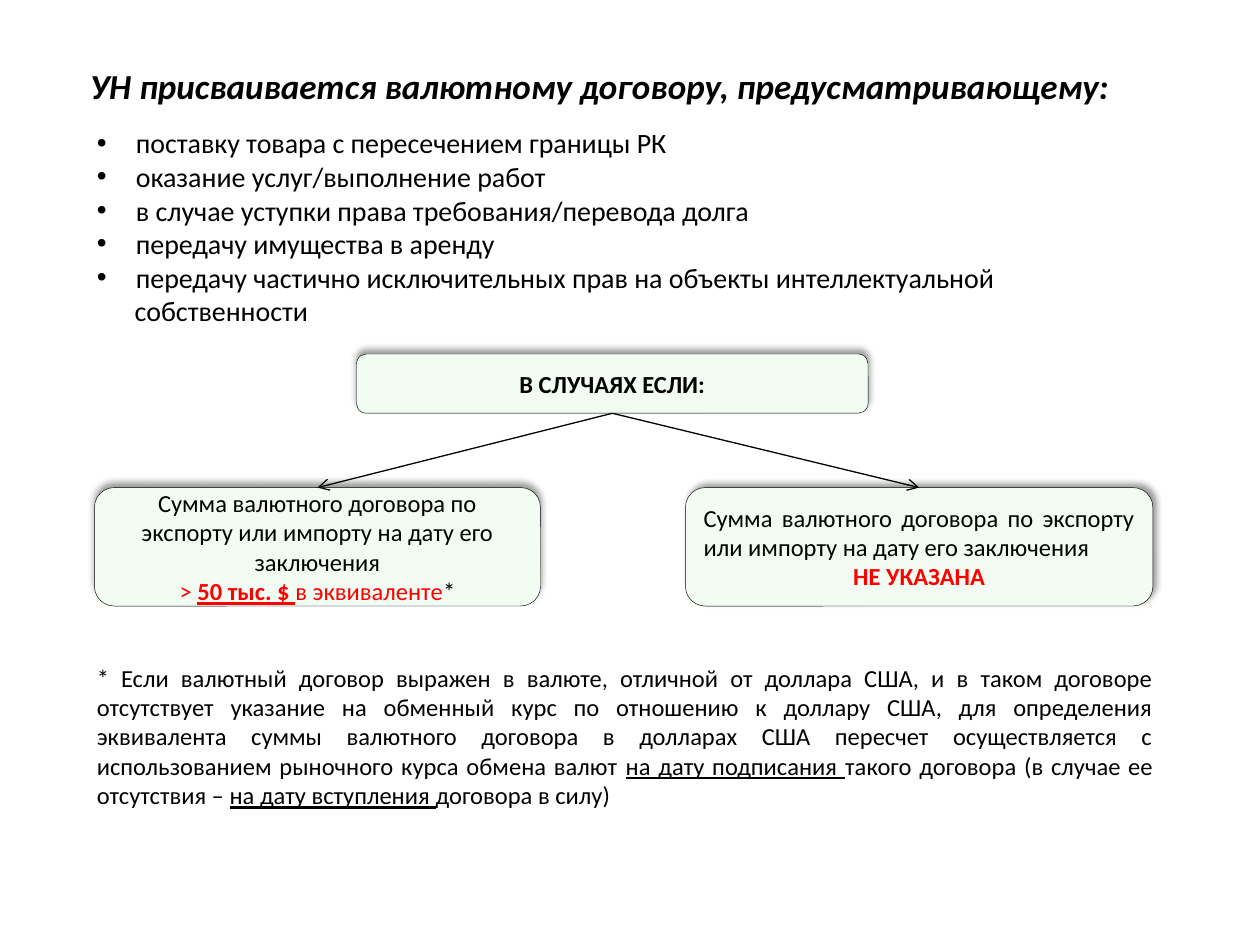
from dataclasses import dataclass

from lxml.etree import SubElement
from pptx import Presentation
from pptx.dml.color import RGBColor
from pptx.enum.shapes import MSO_CONNECTOR, MSO_SHAPE
from pptx.enum.text import MSO_ANCHOR, PP_ALIGN
from pptx.oxml.ns import qn
from pptx.util import Inches, Pt


@dataclass(frozen=True)
class Theme:
    """Hold the colours, font and type sizes of the deck."""
    font: str = "Calibri"
    ink: str = "000000"
    accent: str = "FF0000"
    paper: str = "FFFFFF"
    card: str = "F2FCF2"
    title_size: int = 20
    bullet_size: int = 16
    body_size: int = 14


THEME = Theme()


def add_span(para, text, *, size=THEME.body_size, color=THEME.ink,
             bold=False, italic=False, underline=False):
    """Append formatted text to a paragraph."""
    span = para.add_run()
    span.text = text
    font = span.font
    font.name, font.size = THEME.font, Pt(size)
    font.color.rgb = RGBColor.from_string(color)
    font.bold, font.italic, font.underline = bold, italic, underline


def add_para(box, spans, alignment=PP_ALIGN.LEFT):
    """Add a paragraph of (text, format) spans, using the empty first one if free."""
    frame = box.text_frame
    first = frame.paragraphs[0]
    para = frame.add_paragraph() if first.runs else first
    para.alignment = alignment
    for text, style in spans:
        add_span(para, text, **style)
    return para


def set_indent(para, left, bullet=None):
    """Indent a paragraph and optionally hang a bullet in the indent."""
    properties = para._p.get_or_add_pPr()
    properties.set("marL", str(Inches(left)))
    properties.set("indent", str(Inches(-left if bullet else 0)))
    if bullet:
        SubElement(properties, qn("a:buFont"), typeface="Arial")
        SubElement(properties, qn("a:buChar"), char=bullet)


def add_text_box(page, left, top, width, height):
    """Add a wrapping text box."""
    box = page.shapes.add_textbox(Inches(left), Inches(top), Inches(width), Inches(height))
    box.text_frame.word_wrap = True
    return box


def add_panel(page, kind, fill, left, top, width, height):
    """Add a filled shape without line or shadow, with text in its middle."""
    panel = page.shapes.add_shape(
        kind, Inches(left), Inches(top), Inches(width), Inches(height))
    panel.shadow.inherit = False
    panel.fill.solid()
    panel.fill.fore_color.rgb = RGBColor.from_string(fill)
    panel.line.fill.background()
    panel.text_frame.word_wrap = True
    panel.text_frame.vertical_anchor = MSO_ANCHOR.MIDDLE
    return panel


def add_card(page, left, top, width, height, shadow_angle=270):
    """Add a rounded, outlined card with a soft shadow."""
    card = add_panel(page, MSO_SHAPE.ROUNDED_RECTANGLE, THEME.card, left, top, width, height)
    card.line.color.rgb = RGBColor.from_string(THEME.ink)
    card.line.width = Pt(0.25)
    effects = card._element.spPr.find(qn("a:effectLst"))
    shadow = SubElement(effects, qn("a:outerShdw"), blurRad=str(Pt(4)), dist=str(Pt(3)),
                        dir=str(shadow_angle * 60000), rotWithShape="0")
    color = SubElement(shadow, qn("a:srgbClr"), val=THEME.ink)
    SubElement(color, qn("a:alpha"), val="40000")
    return card


def add_arrow(page, source, target):
    """Join the bottom of one card to the top of another with an arrow."""
    arrow = page.shapes.add_connector(MSO_CONNECTOR.STRAIGHT, 0, 0, 0, 0)
    arrow.begin_connect(source, 2)
    arrow.end_connect(target, 0)
    arrow.line.color.rgb = RGBColor.from_string(THEME.ink)
    arrow.line.width = Pt(0.75)
    SubElement(arrow.line._get_or_add_ln(), qn("a:tailEnd"), type="arrow")
    SubElement(arrow._element.spPr, qn("a:effectLst"))


def add_heading(page):
    """Add the slide heading."""
    heading = add_panel(page, MSO_SHAPE.RECTANGLE, THEME.paper, 0.37, 0.41, 8.78, 0.54)
    style = dict(size=THEME.title_size, bold=True, italic=True)
    add_para(heading, [("УН присваивается валютному договору, предусматривающему:", style)],
             PP_ALIGN.CENTER)


def add_subjects(page):
    """Add the bulleted list of contract subjects."""
    box = add_text_box(page, 0.67, 0.95, 8.48, 1.69)
    style = dict(size=THEME.bullet_size)
    subjects = [
        "поставку товара с пересечением границы РК",
        "оказание услуг/выполнение работ",
        "в случае уступки права требования/перевода долга",
        "передачу имущества в аренду",
        "передачу частично исключительных прав на объекты интеллектуальной",
    ]
    for subject in subjects:
        set_indent(add_para(box, [(subject, style)]), 0.31, "•")
    set_indent(add_para(box, [("собственности", style)]), 0.3)


def add_conditions(page):
    """Add the card diagram of the two conditions."""
    red = dict(color=THEME.accent)
    condition = "Сумма валютного договора по экспорту или импорту на дату его заключения"
    cases = add_card(page, 2.83, 2.81, 4.06, 0.47)
    add_para(cases, [("В СЛУЧАЯХ ЕСЛИ:", dict(bold=True))], PP_ALIGN.CENTER)

    above_limit = add_card(page, 0.75, 3.87, 3.54, 0.94)
    add_para(above_limit, [(condition, {})], PP_ALIGN.CENTER)
    add_para(above_limit, [
        ("> ", red),
        ("50 тыс. $ ", dict(red, bold=True, underline=True)),
        ("в эквиваленте", red),
        ("*", {}),
    ], PP_ALIGN.CENTER)

    not_stated = add_card(page, 5.44, 3.87, 3.71, 0.94, shadow_angle=315)
    add_para(not_stated, [(condition, {})], PP_ALIGN.JUSTIFY)
    add_para(not_stated, [("НЕ УКАЗАНА", dict(red, bold=True))], PP_ALIGN.CENTER)

    for outcome in (above_limit, not_stated):
        add_arrow(page, cases, outcome)


def add_footnote(page):
    """Add the note on converting the contract amount."""
    box = add_text_box(page, 0.67, 5.21, 8.58, 1.34)
    underlined = dict(underline=True)
    add_para(box, [
        ("* Если валютный договор выражен в валюте, отличной от доллара США, и в таком "
         "договоре отсутствует указание на обменный курс по отношению к доллару США, для "
         "определения эквивалента суммы валютного договора в долларах США пересчет "
         "осуществляется с использованием рыночного курса обмена валют ", {}),
        ("на дату подписания ", underlined),
        ("такого договора (в случае ее отсутствия – ", {}),
        ("на дату вступления ", underlined),
        ("договора в силу)", {}),
    ], PP_ALIGN.JUSTIFY)


def main():
    """Build and save the deck."""
    deck = Presentation()
    deck.slide_width, deck.slide_height = Inches(10), Inches(7.5)
    page = deck.slides.add_slide(deck.slide_layouts[6])
    add_heading(page)
    add_subjects(page)
    add_conditions(page)
    add_footnote(page)
    deck.save("out.pptx")


if __name__ == "__main__":
    main()
